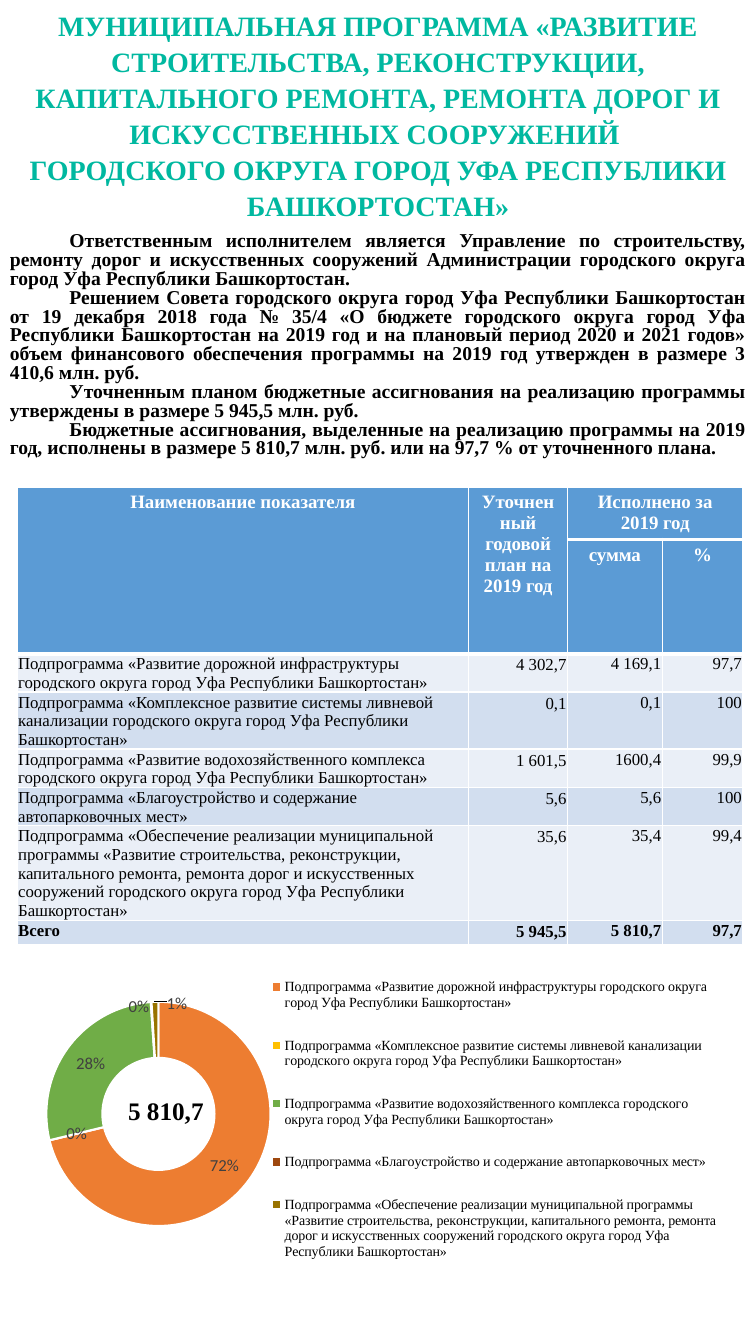
from dataclasses import dataclass

from lxml import etree
from pptx import Presentation
from pptx.chart.data import CategoryChartData
from pptx.dml.color import RGBColor
from pptx.enum.chart import XL_CHART_TYPE, XL_LEGEND_POSITION
from pptx.enum.text import MSO_ANCHOR, PP_ALIGN
from pptx.oxml import parse_xml
from pptx.oxml.ns import nsdecls, qn
from pptx.util import Emu, Pt

LEFT, CENTER, RIGHT, JUSTIFY = PP_ALIGN.LEFT, PP_ALIGN.CENTER, PP_ALIGN.RIGHT, PP_ALIGN.JUSTIFY
TOP, MIDDLE = MSO_ANCHOR.TOP, MSO_ANCHOR.MIDDLE
DOUGHNUT, LEGEND_RIGHT = XL_CHART_TYPE.DOUGHNUT, XL_LEGEND_POSITION.RIGHT

EMU_PER_PX = 9144  # 100 px to the inch
SERIF, SANS = "Times New Roman", "Calibri"
COLORS = {
    "title": "00B8A0", "text": "000000", "white": "FFFFFF", "label": "404040",
    "header": "5B9BD5", "light": "EAEFF7", "dark": "D2DEEF",
    "orange": "ED7D31", "yellow": "FFC000", "green": "70AD47",
    "rust": "9E480E", "olive": "997300",
}


@dataclass(frozen=True)
class TextStyle:
    size: float
    color: str = "text"
    bold: bool = True
    align: PP_ALIGN = LEFT
    spacing: float = 1.0
    font: str = SERIF


@dataclass(frozen=True)
class TextBlock:
    left: int
    top: int
    width: int
    height: int
    paragraphs: tuple[str, ...]
    style: TextStyle
    anchor: MSO_ANCHOR = TOP
    wrap: bool = True
    indent: int = 0


@dataclass(frozen=True)
class Subprogram:
    name: str
    figures: tuple[str, str, str]
    height: int
    share: float
    color: str


SUBPROGRAMS = (
    Subprogram("Подпрограмма «Развитие дорожной инфраструктуры городского округа город Уфа Республики Башкортостан»",
               ("4 302,7", "4 169,1", "97,7"), 38, 72, "orange"),
    Subprogram("Подпрограмма «Комплексное развитие системы ливневой канализации городского округа город Уфа Республики Башкортостан»",
               ("0,1", "0,1", "100"), 56, 0.002, "yellow"),
    Subprogram("Подпрограмма «Развитие водохозяйственного комплекса городского округа город Уфа Республики Башкортостан»",
               ("1 601,5", "1600,4", "99,9"), 38, 28, "green"),
    Subprogram("Подпрограмма «Благоустройство и содержание автопарковочных мест»",
               ("5,6", "5,6", "100"), 38, 0.1, "rust"),
    Subprogram("Подпрограмма «Обеспечение реализации муниципальной программы «Развитие строительства, реконструкции, капитального ремонта, ремонта дорог и искусственных сооружений городского округа город Уфа Республики Башкортостан»",
               ("35,6", "35,4", "99,4"), 94, 1, "olive"),
)
TOTAL = ("Всего", "5 945,5", "5 810,7", "97,7")
TOTAL_HEIGHT = 24
HEADER_HEIGHTS = (52, 112)
COLUMN_WIDTHS = (448, 98, 94, 80)
# row, column, last row, last column, caption
HEADERS = (
    (0, 0, 1, 0, "Наименование показателя"),
    (0, 1, 1, 1, "Уточненный годовой план на 2019 год"),
    (0, 2, 0, 3, "Исполнено за 2019 год"),
    (1, 2, 1, 2, "сумма"),
    (1, 3, 1, 3, "%"),
)
LABEL_SHIFTS = {3: (-0.02, -0.06), 4: (0.03, -0.07)}
PERCENT_FORMAT = '0"%"'

BLOCKS = (
    TextBlock(0, 0, 750, 226, (
        "МУНИЦИПАЛЬНАЯ ПРОГРАММА «РАЗВИТИЕ СТРОИТЕЛЬСТВА, РЕКОНСТРУКЦИИ, КАПИТАЛЬНОГО РЕМОНТА, РЕМОНТА ДОРОГ И ИСКУССТВЕННЫХ СООРУЖЕНИЙ \vГОРОДСКОГО ОКРУГА ГОРОД УФА РЕСПУБЛИКИ БАШКОРТОСТАН»",
    ), TextStyle(20, "title", align=CENTER, spacing=1.07), anchor=MIDDLE),
    TextBlock(0, 226, 750, 236, (
        "Ответственным исполнителем является Управление по строительству, ремонту дорог и искусственных сооружений Администрации городского округа город Уфа Республики Башкортостан.",
        "Решением Совета городского округа город Уфа Республики Башкортостан от 19 декабря 2018 года № 35/4 «О бюджете городского округа город Уфа Республики Башкортостан на 2019 год и на плановый период 2020 и 2021 годов» объем финансового обеспечения программы на 2019 год утвержден в размере 3 410,6 млн. руб.",
        "Уточненным планом бюджетные ассигнования на реализацию программы утверждены в размере 5 945,5 млн. руб.",
        "Бюджетные ассигнования, выделенные на реализацию программы на 2019 год, исполнены в размере 5 810,7 млн. руб. или на 97,7 % от уточненного плана.",
    ), TextStyle(14, align=JUSTIFY, spacing=0.8), indent=59),
    TextBlock(116, 1079, 96, 40, (TOTAL[2],),
              TextStyle(18, align=RIGHT, spacing=1.07), wrap=False),
)


def px(value: int) -> Emu:
    return Emu(value * EMU_PER_PX)


def rgb(name: str) -> RGBColor:
    return RGBColor.from_string(COLORS[name])


def style_font(font, style: TextStyle) -> None:
    font.name, font.size, font.bold = style.font, Pt(style.size), style.bold
    font.color.rgb = rgb(style.color)


def style_paragraph(para, style: TextStyle) -> None:
    para.alignment, para.line_spacing = style.align, style.spacing
    for span in para.runs:
        style_font(span.font, style)


def add_text(page, block: TextBlock) -> None:
    box = page.shapes.add_textbox(px(block.left), px(block.top), px(block.width), px(block.height))
    frame = box.text_frame
    frame.word_wrap, frame.vertical_anchor = block.wrap, block.anchor
    frame.text = "\n".join(block.paragraphs)
    for para in frame.paragraphs:
        if block.indent:
            para._p.get_or_add_pPr().set("indent", str(px(block.indent)))
        style_paragraph(para, block.style)


def paint_cell(cell, color: str, bottom: int = 1) -> None:
    """Fill a cell and give it white borders, the bottom one of the given points."""
    cell.fill.solid()
    cell.fill.fore_color.rgb = rgb(color)
    properties = cell._tc.get_or_add_tcPr()
    for index, (side, width) in enumerate((("L", 1), ("R", 1), ("T", 1), ("B", bottom))):
        properties.insert(index, parse_xml(
            f'<a:ln{side} {nsdecls("a")} w="{Pt(width)}"><a:solidFill>'
            f'<a:srgbClr val="{COLORS["white"]}"/></a:solidFill></a:ln{side}>'))


def write_cell(cell, text: str, style: TextStyle) -> None:
    cell.text = text
    style_paragraph(cell.text_frame.paragraphs[0], style)


def add_budget_table(page) -> None:
    heights = (*HEADER_HEIGHTS, *(item.height for item in SUBPROGRAMS), TOTAL_HEIGHT)
    table = page.shapes.add_table(len(heights), len(COLUMN_WIDTHS), px(17), px(483),
                                  px(sum(COLUMN_WIDTHS)), px(sum(heights))).table
    for column, width in zip(table.columns, COLUMN_WIDTHS):
        column.width = px(width)
    for row, height in zip(table.rows, heights):
        row.height = px(height)
    for row in range(len(HEADER_HEIGHTS)):
        for column in range(len(COLUMN_WIDTHS)):
            paint_cell(table.cell(row, column), "header", bottom=3)
    for row, column, last_row, last_column, caption in HEADERS:
        cell = table.cell(row, column)
        if (row, column) != (last_row, last_column):
            cell.merge(table.cell(last_row, last_column))
        write_cell(cell, caption, TextStyle(13.5, "white", align=CENTER))
    body = [(item.name, *item.figures) for item in SUBPROGRAMS] + [TOTAL]
    for index, values in enumerate(body):
        for column, value in enumerate(values):
            cell = table.cell(index + len(HEADER_HEIGHTS), column)
            cell.margin_left = cell.margin_right = px(1)
            cell.margin_top, cell.margin_bottom = px(1 if column < 2 else 0), 0
            paint_cell(cell, "dark" if index % 2 else "light")
            write_cell(cell, value, TextStyle(12, bold=values is TOTAL, align=RIGHT if column else LEFT,
                                              spacing=1.07 if column else 1.0))


def set_layout(parent, position: int, **settings: object) -> None:
    """Replace the automatic layout of a chart part with a manual one."""
    for old in parent.findall(qn("c:layout")):
        parent.remove(old)
    parts = "".join(f'<c:{name} val="{value}"/>' for name, value in settings.items())
    parent.insert(position, parse_xml(
        f'<c:layout {nsdecls("c")}><c:manualLayout>{parts}</c:manualLayout></c:layout>'))


def add_share_chart(page) -> None:
    data = CategoryChartData()
    data.categories = [item.name for item in SUBPROGRAMS]
    data.add_series("Series 1", [item.share for item in SUBPROGRAMS])
    chart = page.shapes.add_chart(DOUGHNUT, px(26), px(922), px(698), px(377), data).chart
    chart.has_title = False
    style_font(chart.font, TextStyle(10, bold=False, font=SANS))
    chart.has_legend = True
    legend = chart.legend
    legend.position, legend.include_in_layout = LEGEND_RIGHT, False
    style_font(legend.font, TextStyle(10, bold=False))
    set_layout(legend._element, 1, xMode="edge", yMode="edge", x=0.34, y=0.06, w=0.65, h=0.88)
    plot = chart.plots[0]
    plot.vary_by_categories = True
    plot._element.find(qn("c:holeSize")).set("val", "75")
    set_layout(plot._element.getparent(), 0, layoutTarget="inner", xMode="edge", yMode="edge",
               x=0.028, y=0.19, w=0.32, h=0.59)
    series = plot.series[0]
    label_style = TextStyle(12, "label", bold=False, font=SANS)
    labels = series.data_labels
    labels.show_value = True
    labels.number_format, labels.number_format_is_linked = PERCENT_FORMAT, False
    style_font(labels.font, label_style)
    for index, item in enumerate(SUBPROGRAMS):
        slice_format = series.points[index].format
        slice_format.fill.solid()
        slice_format.fill.fore_color.rgb = rgb(item.color)
        slice_format.line.color.rgb = rgb("white")
        slice_format.line.width = Pt(1.5)
    for index, (x, y) in LABEL_SHIFTS.items():
        style_font(series.points[index].data_label.font, label_style)
        mark = series._element.xpath(f"c:dLbls/c:dLbl/c:idx[@val='{index}']")[0]
        mark.addnext(etree.Element(qn("c:numFmt"), formatCode=PERCENT_FORMAT, sourceLinked="0"))
        set_layout(mark.getparent(), 1, x=x, y=y)


def main() -> None:
    deck = Presentation()
    deck.slide_width, deck.slide_height = px(750), px(1333)
    page = deck.slides.add_slide(deck.slide_layouts[6])
    add_budget_table(page)
    add_share_chart(page)
    for block in BLOCKS:
        add_text(page, block)
    deck.save("out.pptx")


if __name__ == "__main__":
    main()
